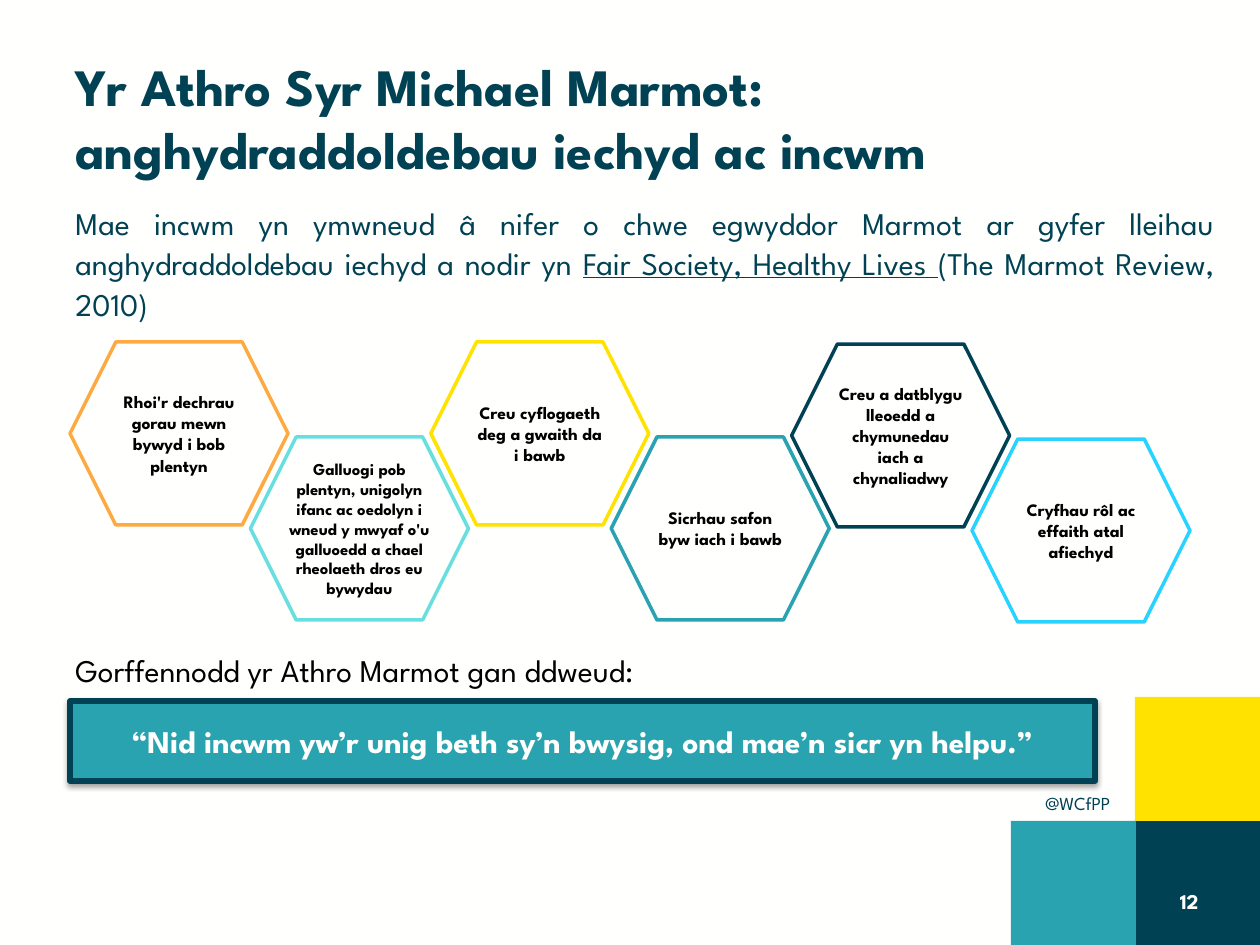
import pptx
import pptx.util
import pptx.dml.color
import pptx.enum.shapes
import pptx.enum.text
import pptx.oxml

PX = 914400 / 126
FONT = "League Spartan"
NAVY, TEAL, YELLOW = "004253", "29A3AF", "FFE200"
OFF_WHITE, BLACK = "FFFFFE", "000000"
SHAPE = pptx.enum.shapes.MSO_SHAPE
ALIGN = pptx.enum.text.PP_ALIGN
ANCHOR = pptx.enum.text.MSO_ANCHOR

BODY = {"alignment": ALIGN.JUSTIFY, "line_spacing": 1.07,
        "space_after": pptx.util.Pt(8)}
CENTRED = {"alignment": ALIGN.CENTER}

# Outline colour, font size and text, from left to right
PRINCIPLES = [
    ("FFAA41", 10, "Rhoi'r dechrau gorau mewn bywyd i bob plentyn"),
    ("68DFDF", 9.5, "Galluogi pob plentyn, unigolyn ifanc ac oedolyn i wneud y "
                    "mwyaf o'u galluoedd a chael rheolaeth dros eu bywydau"),
    (YELLOW, 10, "Creu cyflogaeth deg a gwaith da i bawb"),
    (TEAL, 10, "Sicrhau safon byw iach i bawb"),
    (NAVY, 10, "Creu a datblygu lleoedd a chymunedau iach a chynaliadwy"),
    ("2AD3FF", 10, "Cryfhau rôl ac effaith atal afiechyd"),
]

SHADOW = (
    '<a:effectLst xmlns:a="http://schemas.openxmlformats.org/drawingml/2006/main">'
    '<a:outerShdw blurRad="39370" dist="20320" dir="5400000" rotWithShape="0">'
    '<a:srgbClr val="000000"><a:alpha val="38000"/></a:srgbClr>'
    '</a:outerShdw></a:effectLst>')


def rgb(value):
    return pptx.dml.color.RGBColor.from_string(value)


def px(*values):
    return [round(v * PX) for v in values]


def set_all(obj, values):
    for name, value in values.items():
        setattr(obj, name, value)


def write(sp, runs, size, colour, bold=False, paragraph=None, anchor=ANCHOR.TOP):
    """Fill a shape with one paragraph of (text, underline) runs."""
    tf = sp.text_frame
    set_all(tf, {"word_wrap": True, "vertical_anchor": anchor})
    p = tf.paragraphs[0]
    set_all(p, paragraph or {"alignment": ALIGN.LEFT})
    for text, underline in runs:
        r = p.add_run()
        r.text = text
        set_all(r.font, {"name": FONT, "size": pptx.util.Pt(size), "bold": bold,
                         "underline": underline})
        r.font.color.rgb = rgb(colour)


def add_text(s, box, runs, size, colour, **options):
    write(s.shapes.add_textbox(*px(*box)), runs, size, colour, **options)


def add_block(s, kind, box, fill, line=None, width=2):
    sp = s.shapes.add_shape(kind, *px(*box))
    sp.shadow.inherit = False
    sp.fill.solid()
    sp.fill.fore_color.rgb = rgb(fill)
    if line:
        sp.line.color.rgb = rgb(line)
        sp.line.width = pptx.util.Pt(width)
    else:
        sp.line.fill.background()
    return sp


def add_principle(s, index):
    line, size, text = PRINCIPLES[index]
    top = 342 + 95 * (index % 2) + (2 if index >= 4 else 0)
    box = (70 + 180.4 * index, top, 218, 183)
    sp = add_block(s, SHAPE.HEXAGON, box, OFF_WHITE, line)
    if size < 10:
        side, edge = px(5, 6)
        set_all(sp.text_frame, {"margin_left": side, "margin_right": side,
                                "margin_top": edge, "margin_bottom": edge})
    write(sp, [(text, False)], size, BLACK, bold=True, paragraph=CENTRED,
          anchor=ANCHOR.MIDDLE)


def add_quote(s):
    sp = add_block(s, SHAPE.RECTANGLE, (70, 701, 1025, 80), TEAL, NAVY, 3)
    sp.shadow.inherit = True  # drops the empty effect list
    sp.line._get_or_add_ln().addnext(pptx.oxml.parse_xml(SHADOW))
    write(sp, [("“Nid incwm yw’r unig beth sy’n bwysig, ond mae’n sicr yn helpu.”",
                False)],
          18, OFF_WHITE, bold=True, paragraph=CENTRED, anchor=ANCHOR.MIDDLE)


def main():
    prs = pptx.Presentation()
    prs.slide_width, prs.slide_height = px(1260, 945)
    s = prs.slides.add_slide(prs.slide_layouts[6])
    s.background.fill.solid()
    s.background.fill.fore_color.rgb = rgb(OFF_WHITE)

    # Corner squares and handle
    for left, top, fill in ((1135, 821, NAVY), (1135, 697, YELLOW), (1011, 821, TEAL)):
        add_block(s, SHAPE.RECTANGLE, (left, top, 125, 124), fill)
    add_text(s, (1033, 786, 102, 37), [("@WCfPP", False)], 10.5, NAVY)

    # Title and introduction
    add_text(s, (63, 38, 1134, 157),
             [("Yr Athro Syr Michael Marmot: anghydraddoldebau iechyd ac incwm", False)],
             30, NAVY, bold=True, anchor=ANCHOR.MIDDLE)
    add_text(s, (63, 195, 1164, 140),
             [("Mae incwm yn ymwneud â nifer o chwe egwyddor Marmot ar gyfer lleihau "
               "anghydraddoldebau iechyd a nodir yn ", False),
              ("Fair Society, Healthy Lives ", True),
              ("(The Marmot Review, 2010)", False)],
             18, NAVY, paragraph=BODY)

    # Slide number
    add_text(s, (917, 876, 294, 50), [("12", False)], 12, "FFFFFF", bold=True,
             paragraph={"alignment": ALIGN.RIGHT}, anchor=ANCHOR.MIDDLE)

    # Six principles: in each pair the lower hexagon lies behind
    for index in (1, 0, 3, 2, 5, 4):
        add_principle(s, index)

    # Closing quote
    add_text(s, (63, 642, 908, 50),
             [("Gorffennodd yr Athro Marmot gan ddweud:", False)], 18, BLACK,
             paragraph=BODY)
    add_quote(s)
    prs.save("out.pptx")


if __name__ == "__main__":
    main()
